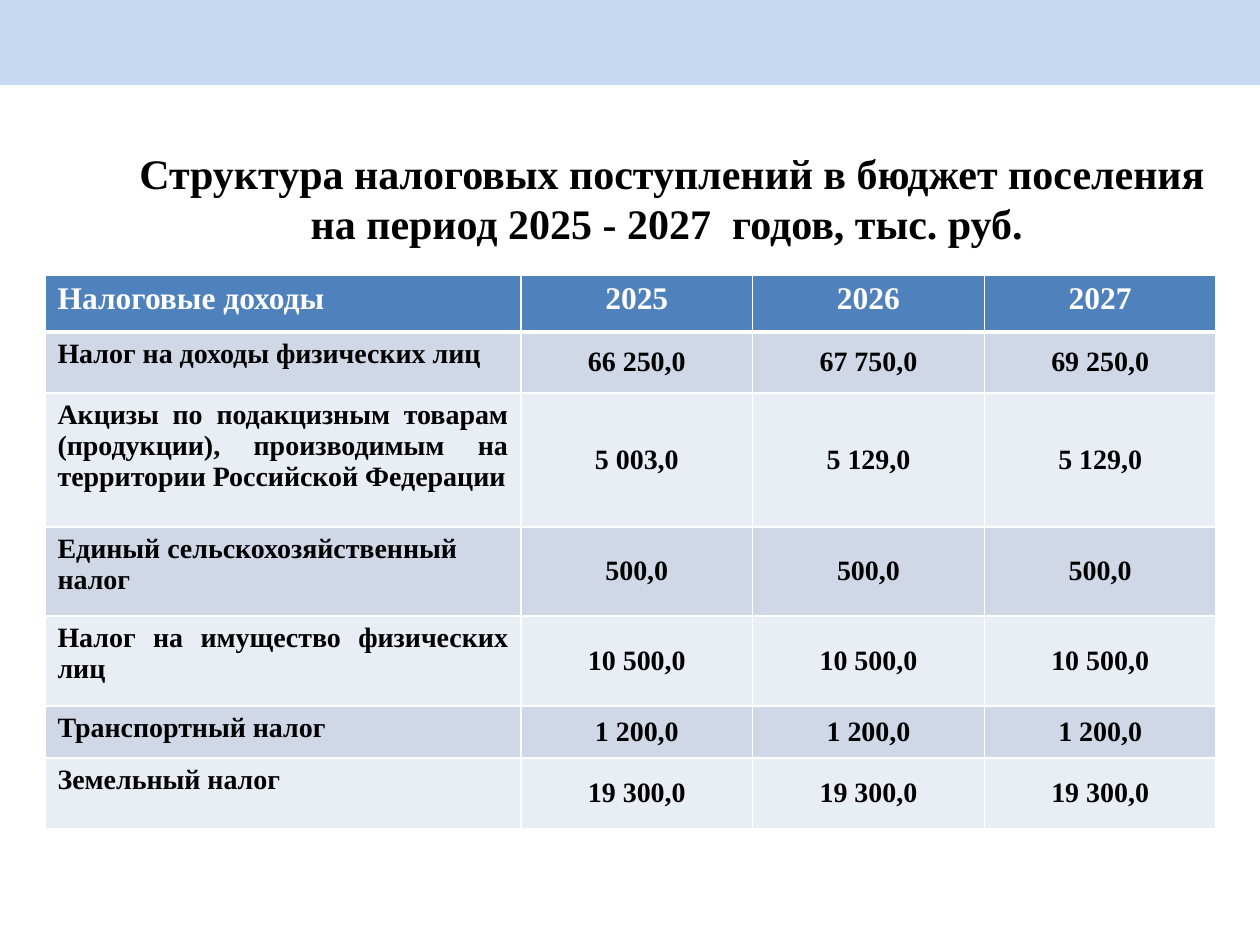
from lxml.etree import SubElement
from pptx import Presentation
from pptx.dml.color import RGBColor
from pptx.enum.shapes import MSO_SHAPE as Shape
from pptx.enum.text import MSO_ANCHOR as Anchor, MSO_AUTO_SIZE as AutoSize, PP_ALIGN as Align
from pptx.oxml.ns import qn
from pptx.util import Pt

SCALE = 914400 / 126
YEARS = ["2025", "2026", "2027"]
TAXES = [
    ("Налог на доходы физических лиц", Align.LEFT, 61, ["66 250,0", "67 750,0", "69 250,0"]),
    ("Акцизы по подакцизным товарам (продукции), производимым на территории Российской Федерации",
     Align.JUSTIFY, 134, ["5 003,0", "5 129,0", "5 129,0"]),
    ("Единый сельскохозяйственный налог", Align.LEFT, 89, ["500,0"] * 3),
    ("Налог на имущество физических лиц", Align.JUSTIFY, 90, ["10 500,0"] * 3),
    ("Транспортный налог", Align.JUSTIFY, 52, ["1 200,0"] * 3),
    ("Земельный налог", Align.JUSTIFY, 71, ["19 300,0"] * 3),
]


def px(n):
    return round(n * SCALE)


def rgb(color):
    return RGBColor.from_string(color)


def write(tf, text, size, color, align):
    p = tf.paragraphs[0]
    p.alignment = align
    r = p.add_run()
    r.text = text
    for name, value in {"name": "Times New Roman", "size": Pt(size), "bold": True}.items():
        setattr(r.font, name, value)
    r.font.color.rgb = rgb(color)


def add_band(s, x, y, w, h):
    sp = s.shapes.add_shape(Shape.RECTANGLE, px(x), px(y), px(w), px(h))
    sp.shadow.inherit = False
    sp.fill.solid()
    sp.fill.fore_color.rgb = rgb("C6D9F1")
    sp.line.fill.background()


def add_title(s, x, y, w, h):
    sp = s.shapes.title
    box = {"left": x, "top": y, "width": w, "height": h}
    for name, value in box.items():
        setattr(sp, name, px(value))
    tf = sp.text_frame
    frame = {"word_wrap": True, "auto_size": AutoSize.NONE,
             "vertical_anchor": Anchor.TOP, "margin_top": px(12)}
    for name, value in frame.items():
        setattr(tf, name, value)
    write(tf, "Структура налоговых поступлений в бюджет поселения "
              "на период 2025 - 2027  годов, тыс. руб. ", 24, "000000", Align.CENTER)


def set_borders(cell, top, bottom):
    tcPr = cell._tc.get_or_add_tcPr()
    for i, (side, width) in enumerate({"L": 1, "R": 1, "T": top, "B": bottom}.items()):
        ln = SubElement(tcPr, qn(f"a:ln{side}"), w=str(Pt(width)))
        SubElement(SubElement(ln, qn("a:solidFill")), qn("a:srgbClr"), val="FFFFFF")
        tcPr.insert(i, ln)


def add_tax_table(s, x, y, w, h):
    rows = [("Налоговые доходы", Align.LEFT, 57, YEARS), *TAXES]
    table = s.shapes.add_table(len(rows), 4, px(x), px(y), px(w), px(h)).table
    name_w = 476
    for i, col in enumerate(table.columns):
        col.width = px((w - name_w) / 3 if i else name_w)
    for i, (tax, align, row_h, values) in enumerate(rows):
        table.rows[i].height = px(row_h)
        size, color = (16, "000000") if i else (18, "FFFFFF")
        fill = ("E9EDF4", "D0D8E8")[i % 2] if i else "4F81BD"
        for j, text in enumerate([tax, *values]):
            cell = table.cell(i, j)
            cell.fill.solid()
            cell.fill.fore_color.rgb = rgb(fill)
            cell.vertical_anchor = Anchor.MIDDLE if i and j else Anchor.TOP
            write(cell.text_frame, text, size, color, Align.CENTER if j else align)
            set_borders(cell, 3 if i == 1 else 1, 1 if i else 3)


def main():
    prs = Presentation()
    prs.slide_width, prs.slide_height = px(1260), px(945)
    s = prs.slides.add_slide(prs.slide_layouts[5])
    add_band(s, 0, 0, 1260, 85)
    add_title(s, 105, 135, 1134, 39)
    add_tax_table(s, 45, 275, 1171, 554)
    prs.save("out.pptx")


if __name__ == "__main__":
    main()
